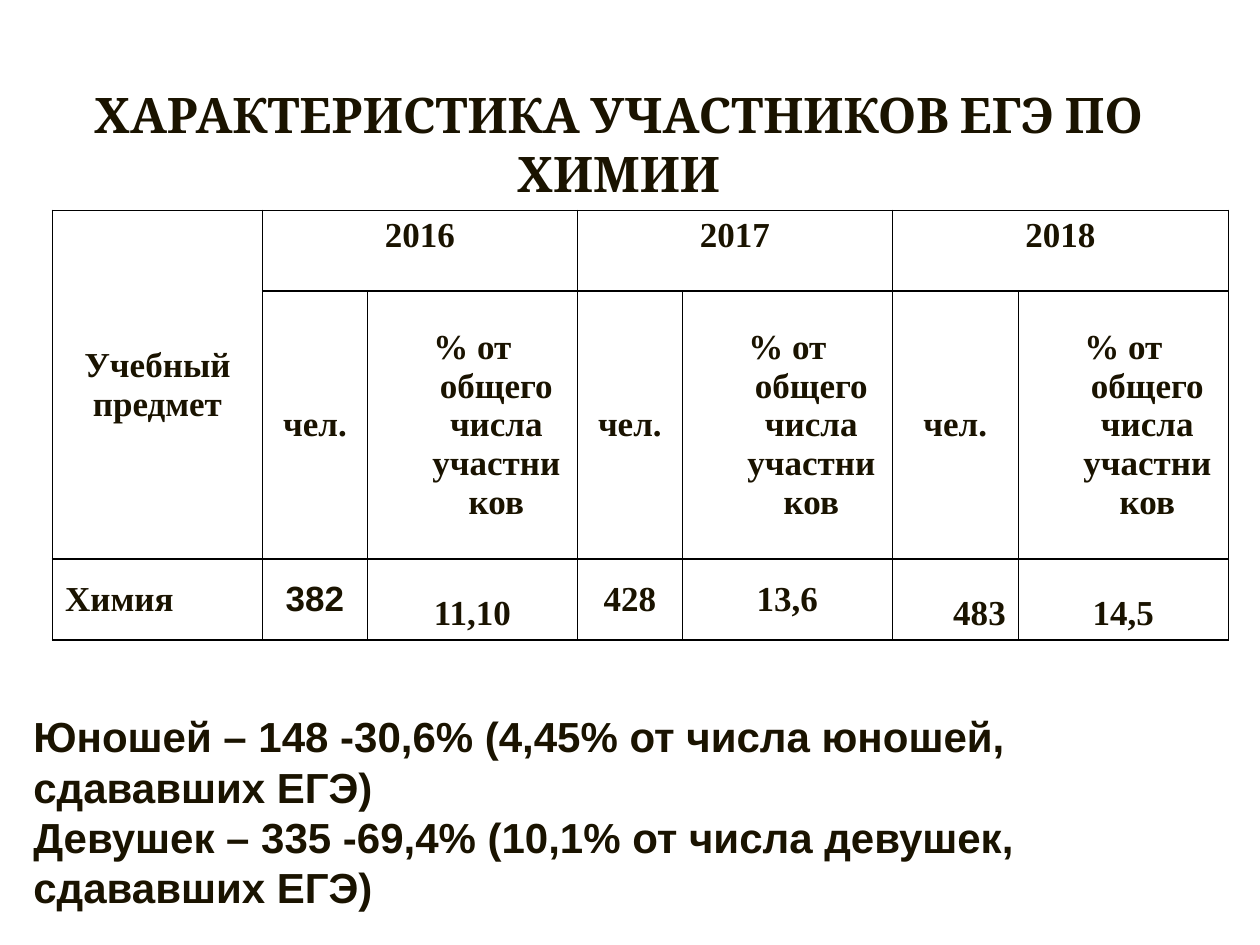
from lxml import etree
from pptx import Presentation
from pptx import util as u
from pptx.dml.color import RGBColor
from pptx.enum import text
from pptx.oxml import ns

LEFT, CENTER, RIGHT = text.PP_ALIGN.LEFT, text.PP_ALIGN.CENTER, text.PP_ALIGN.RIGHT
TOP, MIDDLE, BOTTOM = text.MSO_ANCHOR.TOP, text.MSO_ANCHOR.MIDDLE, text.MSO_ANCHOR.BOTTOM
SERIF = "Times New Roman"
INK = "1A1300"


def color(value):
    return RGBColor.from_string(value)


def write(tf, lines, size=20, font=SERIF, align=CENTER, hanging=0):
    """Fill a text frame with one bold paragraph per line."""
    for i, line in enumerate(lines.split("\n")):
        p = tf.paragraphs[0] if i == 0 else tf.add_paragraph()
        p.alignment = align
        if hanging:
            pPr = p._p.get_or_add_pPr()
            pPr.set("marL", str(u.Inches(hanging)))
            pPr.set("indent", str(-u.Inches(hanging)))
        r = p.add_run()
        r.text = line
        r.font.size, r.font.name, r.font.bold = u.Pt(size), font, True
        r.font.color.rgb = color(INK)


class Page:
    """Slide on a grid of 12 columns and 100 rows."""

    def __init__(self, prs):
        self.s = prs.slides.add_slide(prs.slide_layouts[6])
        self.col = prs.slide_width / 12
        self.row = prs.slide_height / 100

    def box(self, x, y, w, h):
        return [round(v) for v in (x * self.col, y * self.row, w * self.col, h * self.row)]

    def text(self, place, lines, margins=(0.1, 0.05, 0.1, 0.05), **fmt):
        tf = self.s.shapes.add_textbox(*self.box(*place)).text_frame
        tf.word_wrap = True
        tf.auto_size = text.MSO_AUTO_SIZE.SHAPE_TO_FIT_TEXT
        tf.vertical_anchor = MIDDLE
        tf.margin_left, tf.margin_top, tf.margin_right, tf.margin_bottom = map(u.Inches, margins)
        write(tf, lines, **fmt)

    def table(self, x, y, cols, rows):
        place = self.box(x, y, sum(cols), sum(rows))
        tbl = self.s.shapes.add_table(len(rows), len(cols), *place).table
        tbl.first_row = tbl.horz_banding = False
        for column, w in zip(tbl.columns, cols):
            column.width = round(w * self.col)
        for line, h in zip(tbl.rows, rows):
            line.height = round(h * self.row)
        for cell in tbl.iter_cells():
            self.border(cell)
            cell.fill.background()
        return tbl

    def border(self, cell, value="000000", width=1):
        tcPr = cell._tc.get_or_add_tcPr()
        for side in ("lnL", "lnR", "lnT", "lnB"):
            ln = etree.SubElement(tcPr, ns.qn(f"a:{side}"), w=str(u.Pt(width)))
            fill = etree.SubElement(ln, ns.qn("a:solidFill"))
            etree.SubElement(fill, ns.qn("a:srgbClr"), val=value)

    def cell(self, cell, lines, anchor=MIDDLE, **fmt):
        cell.vertical_anchor = anchor
        write(cell.text_frame, lines, hanging=0.38, **fmt)


def main():
    prs = Presentation()
    prs.slide_width, prs.slide_height = u.Inches(10), u.Inches(7.5)
    page = Page(prs)

    # Title
    page.text((0, 10.13, 11.6, 8.13), "ХАРАКТЕРИСТИКА УЧАСТНИКОВ ЕГЭ ПО ХИМИИ",
              margins=(0.25, 0.14, 0.1, 0), size=28, font="Cambria")

    # Table header: subject, then two columns for each year
    tbl = page.table(0.5, 22.25, [2, 1, 2, 1, 2, 1.2, 2], [8.53, 28.4, 8.53])
    tbl.cell(0, 0).merge(tbl.cell(1, 0))
    page.cell(tbl.cell(0, 0), "Учебный\nпредмет")
    for c, year in zip((1, 3, 5), ("2016", "2017", "2018")):
        tbl.cell(0, c).merge(tbl.cell(0, c + 1))
        page.cell(tbl.cell(0, c), year, anchor=TOP)
        page.cell(tbl.cell(1, c), "чел.")
        page.cell(tbl.cell(1, c + 1), "% от общего числа участников")

    # Table values
    values = [
        ("Химия", dict(align=LEFT)),
        ("382", dict(font="Arial")),
        ("11,10", dict(anchor=BOTTOM)),
        ("428", {}),
        ("13,6", {}),
        ("483", dict(anchor=BOTTOM, align=RIGHT)),
        ("14,5", dict(anchor=BOTTOM)),
    ]
    for c, (value, fmt) in enumerate(values):
        page.cell(tbl.cell(2, c), value, **fmt)

    # Split by gender
    page.text((0.2, 71.33, 11.4, 26),
              "Юношей – 148 -30,6% (4,45% от числа юношей, сдававших ЕГЭ)\n"
              "Девушек – 335 -69,4% (10,1% от числа девушек, сдававших ЕГЭ)",
              margins=(0.1, 0.28, 0.1, 0.05), size=24, font="Arial", align=LEFT)

    prs.save("out.pptx")


if __name__ == "__main__":
    main()
